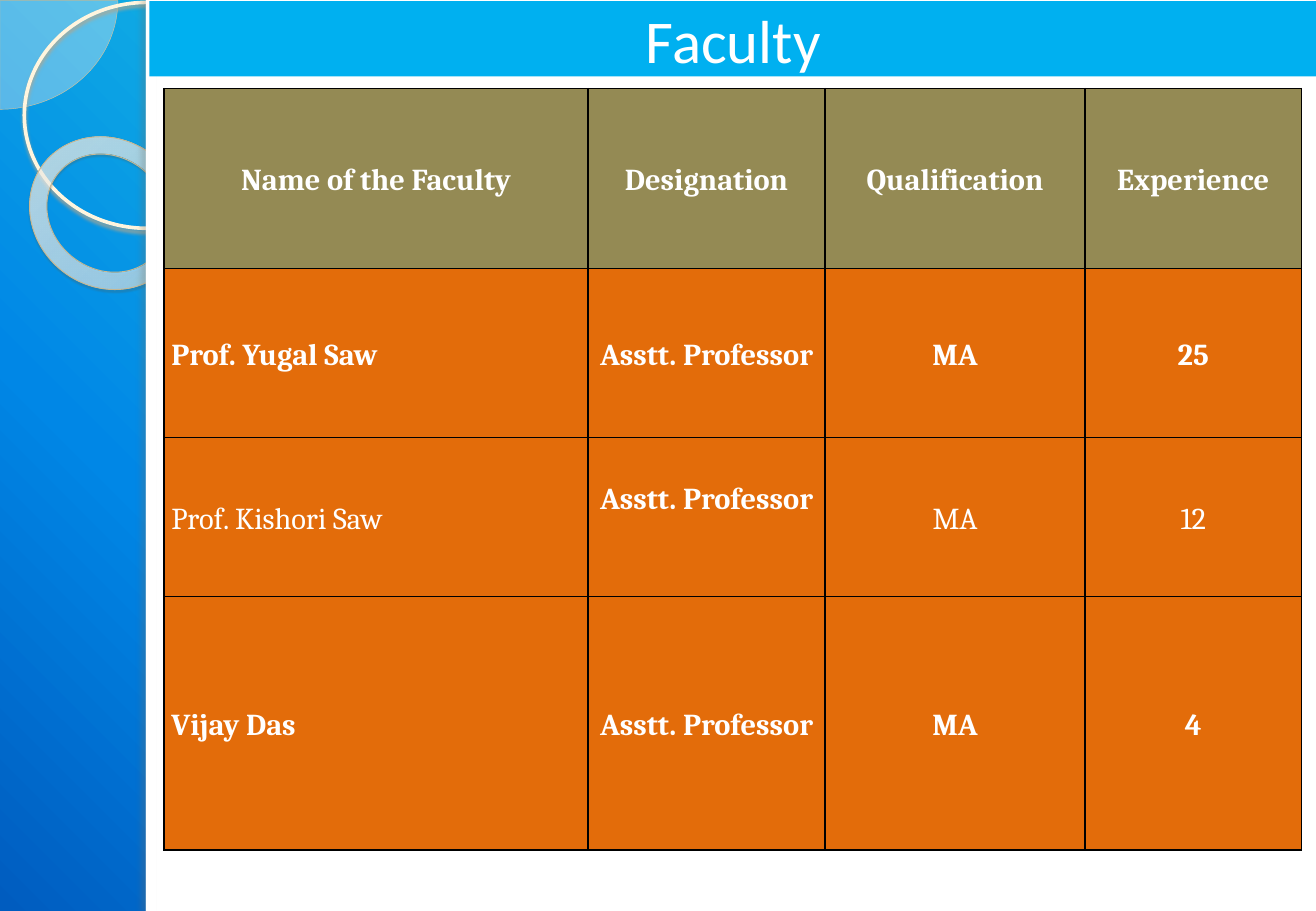
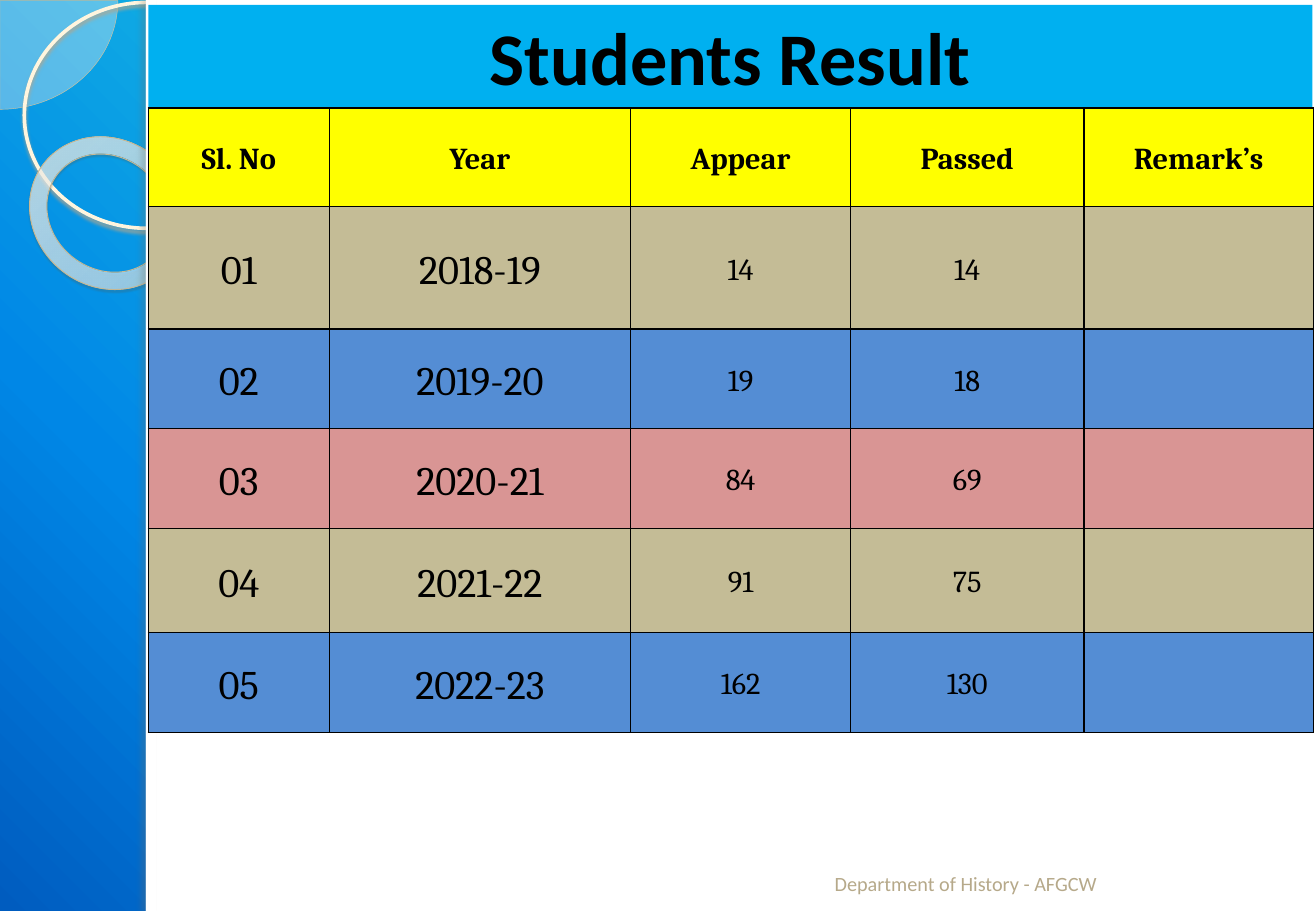
import pptx
import pptx.util
import pptx.dml.color
import pptx.enum.shapes
import pptx.enum.text
import pptx.oxml
import pptx.oxml.ns

Inches, Pt = pptx.util.Inches, pptx.util.Pt
RGB = pptx.dml.color.RGBColor
SHAPE = pptx.enum.shapes.MSO_SHAPE
ALIGN = pptx.enum.text.PP_ALIGN
ANCHOR = pptx.enum.text.MSO_ANCHOR
NS = pptx.oxml.ns.nsdecls("a")

# Colours
WHITE, BLACK = RGB(255, 255, 255), RGB(0, 0, 0)
SKY = RGB(0x00, 0xB0, 0xF0)
OLIVE = RGB(0x94, 0x8A, 0x54)
ORANGE = RGB(0xE3, 0x6C, 0x0A)
YELLOW = RGB(0xFF, 0xFF, 0x00)
TAN = RGB(0xC4, 0xBC, 0x96)
BLUE = RGB(0x54, 0x8D, 0xD4)
PINK = RGB(0xD9, 0x95, 0x94)
SAND = RGB(0xB6, 0xA9, 0x8A)
CREAM = RGB(0xFE, 0xFA, 0xF4)
PIE_LINE = RGB(0xD3, 0xC3, 0x9F)
RING_LINE = RGB(0xFF, 0xF5, 0xDE)
DONUT_LINE = RGB(0xC7, 0xB8, 0x93)

# Gradients: position, colour, opacity in percent
BACK = [(0, "03D4A8", 100), (25, "21D6E0", 100), (75, "0087E6", 100), (100, "005CBF", 100)]
BACK_WAY = '<a:lin ang="8100000" scaled="0"/>'
GLASS = [(0, "FFFCF6", 70), (70, "FFFEFB", 55), (100, "F0D28E", 60)]
GLASS_WAY = ('<a:path path="circle"><a:fillToRect l="-408000" t="-50000" '
             'r="508000" b="150000"/></a:path>')

# Content
STAFF = [
    ("Name of the Faculty", "Designation", "Qualification", "Experience"),
    ("Prof. Yugal Saw", "Asstt. Professor", "MA", "25"),
    ("Prof. Kishori Saw", "Asstt. Professor", "MA", "12"),
    ("Vijay Das", "Asstt. Professor", "MA", "4"),
]
STAFF_COLS, STAFF_ROWS = (3.49, 1.95, 2.14, 1.78), (1.48, 1.39, 1.31, 2.09)
STAFF_FILLS = (OLIVE, ORANGE, ORANGE, ORANGE)

MARKS = [
    ("Sl. No", "Year", "Appear", "Passed", "Remark’s"),
    ("01", "2018-19", "14", "14", ""),
    ("02", "2019-20", "19", "18", ""),
    ("03", "2020-21", "84", "69", ""),
    ("04", "2021-22", "91", "75", ""),
    ("05", "2022-23", "162", "130", ""),
]
MARK_COLS = (1.49, 2.48, 1.81, 1.92, 1.89)
MARK_ROWS = (0.81, 1.01, 0.82, 0.82, 0.86, 0.82)
MARK_FILLS = (YELLOW, TAN, BLUE, PINK, TAN, BLUE)


def write(frame, words, size=18, font="Calibri", color=BLACK, bold=False,
          align=ALIGN.CENTER, space=1.0):
    para = frame.paragraphs[0]
    para.alignment, para.line_spacing = align, space
    run = para.add_run()
    run.text = words
    run.font.size, run.font.name, run.font.bold = Pt(size), font, bold
    run.font.color.rgb = color


def tint(hue, alpha):
    return f'<a:srgbClr val="{hue}"><a:alpha val="{alpha * 1000}"/></a:srgbClr>'


def shade(fill, root, stops, way):
    """Give a fill, found under root, its own gradient."""
    fill.gradient()
    old = root.find(".//" + pptx.oxml.ns.qn("a:gradFill"))
    body = "".join(f'<a:gs pos="{at * 1000}">{tint(hue, alpha)}</a:gs>'
                   for at, hue, alpha in stops)
    new = pptx.oxml.parse_xml(
        f'<a:gradFill {NS} rotWithShape="1"><a:gsLst>{body}</a:gsLst>{way}</a:gradFill>')
    old.getparent().replace(old, new)


def draw(slide, kind, box, fill=None, line=None, width=1, shadow=None):
    shape = slide.shapes.add_shape(kind, *map(Inches, box))
    shape.shadow.inherit = False
    if fill is None:
        shape.fill.background()
    else:
        shape.fill.solid()
        shape.fill.fore_color.rgb = fill
    if line is None:
        shape.line.fill.background()
    else:
        shape.line.color.rgb = line
        shape.line.width = Pt(width)
    if shadow:
        hue, alpha, blur, dist, turn = shadow
        glow = pptx.oxml.parse_xml(
            f'<a:outerShdw {NS} blurRad="{Pt(blur)}" dist="{Pt(dist)}" '
            f'dir="{turn * 60000}" rotWithShape="0">{tint(hue, alpha)}</a:outerShdw>')
        shape.element.spPr.find(pptx.oxml.ns.qn("a:effectLst")).append(glow)
    return shape


def start(deck, title, box, **style):
    """Add a slide with the side band and its title bar."""
    slide = deck.slides.add_slide(deck.slide_layouts[6])
    shade(slide.background.fill, slide.element, BACK, BACK_WAY)

    # Circles on the side band
    pie = draw(slide, SHAPE.PIE, (-0.97, -0.89, 1.94, 1.79), CREAM, PIE_LINE, 0.25)
    pie.adjustments[0], pie.adjustments[1] = 0, 54
    hue = pie.element.spPr.find(".//" + pptx.oxml.ns.qn("a:srgbClr"))
    hue.append(pptx.oxml.parse_xml(f'<a:alpha {NS} val="33000"/>'))
    draw(slide, SHAPE.OVAL, (0.2, 0.02, 2.02, 1.86), None, RING_LINE, 2.15,
         ("B0A68F", 85, 2, 2, 90))
    donut = draw(slide, SHAPE.DONUT, (0.22, 1.15, 1.33, 1.21), None, DONUT_LINE, 0.58,
                 ("5A5444", 35, 1, 1.2, 75))
    donut.adjustments[0] = 0.118
    donut.rotation = 38.6
    shade(donut.fill, donut.element.spPr, GLASS, GLASS_WAY)

    # White page and its edge
    draw(slide, SHAPE.RECTANGLE, (1.2, 0, 9.63, 7.5), WHITE)
    draw(slide, SHAPE.RECTANGLE, (1.2, 0, 0.09, 7.5), WHITE,
         shadow=("736F63", 25, 3, 3, 180))

    # Title bar
    bar = draw(slide, SHAPE.RECTANGLE, box, SKY)
    bar.text_frame.word_wrap = True
    bar.text_frame.vertical_anchor = ANCHOR.MIDDLE
    write(bar.text_frame, title, **style)
    return slide


def edge(cell):
    props = cell._tc.get_or_add_tcPr()
    for spot, side in enumerate("LRTB"):
        props.insert(spot, pptx.oxml.parse_xml(
            f'<a:ln{side} {NS} w="{Pt(1)}"><a:solidFill><a:srgbClr val="{BLACK}"/>'
            f'</a:solidFill></a:ln{side}>'))


def grid(slide, left, top, data, cols, rows, fills, style):
    """Add a table; style gives the text format for a row and column."""
    table = slide.shapes.add_table(
        len(rows), len(cols), Inches(left), Inches(top),
        Inches(sum(cols)), Inches(sum(rows))).table
    table.first_row = table.horz_banding = False
    for col, wide in zip(table.columns, cols):
        col.width = Inches(wide)
    for r, (words, tall, fill) in enumerate(zip(data, rows, fills)):
        table.rows[r].height = Inches(tall)
        for c, word in enumerate(words):
            cell = table.cell(r, c)
            cell.fill.solid()
            cell.fill.fore_color.rgb = fill
            cell.vertical_anchor = ANCHOR.MIDDLE
            cell.margin_left = cell.margin_right = Inches(0.06)
            cell.margin_top = cell.margin_bottom = 0
            edge(cell)
            if word:
                write(cell.text_frame, word, font="Cambria", space=1.15, **style(r, c))
    return table


def staff_style(r, c):
    return {"color": WHITE, "bold": r != 2 or c == 1,
            "align": ALIGN.LEFT if r and c == 0 else ALIGN.CENTER}


def mark_style(r, c):
    return {"bold": r == 0, "size": 24 if r and c < 2 else 18}


def main():
    deck = pptx.Presentation()
    deck.slide_width, deck.slide_height = Inches(10.83), Inches(7.5)

    # Faculty
    slide = start(deck, "Faculty", (1.23, 0.01, 9.61, 0.62), size=36, color=WHITE)
    table = grid(slide, 1.35, 0.73, STAFF, STAFF_COLS, STAFF_ROWS, STAFF_FILLS, staff_style)
    table.cell(2, 1).margin_bottom = Inches(0.33)

    # Students result
    slide = start(deck, "Students Result", (1.22, 0.04, 9.58, 0.84), size=44, bold=True)
    grid(slide, 1.22, 0.89, MARKS, MARK_COLS, MARK_ROWS, MARK_FILLS, mark_style)
    foot = slide.shapes.add_textbox(*map(Inches, (6.77, 6.9, 3.43, 0.52))).text_frame
    foot.word_wrap = True
    foot.vertical_anchor = ANCHOR.BOTTOM
    write(foot, "Department of History - AFGCW", size=12, color=SAND, align=ALIGN.LEFT)

    deck.save("out.pptx")


if __name__ == "__main__":
    main()
